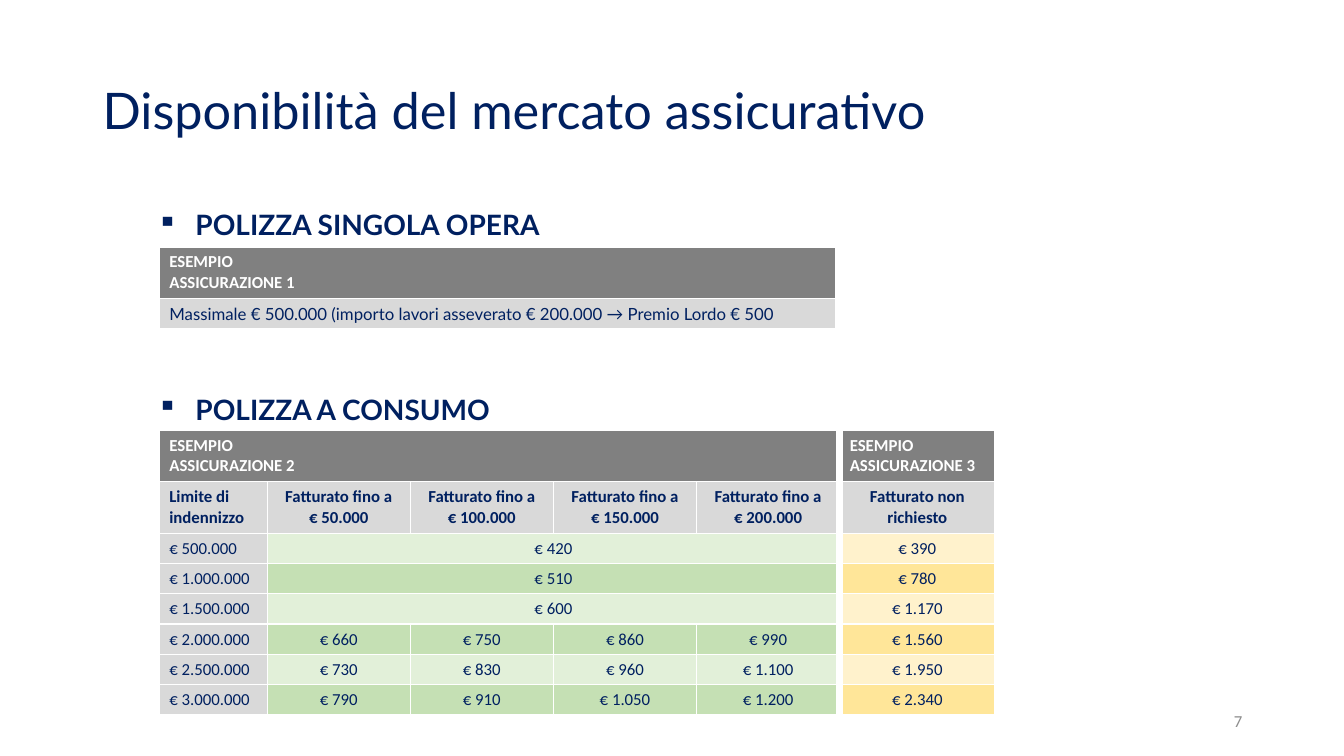
"""Build the slide on the insurance market's single-work and pay-per-use policies."""
import pptx
import pptx.dml.color
import pptx.enum.text
import pptx.oxml
import pptx.oxml.ns
import pptx.util
from pptx.util import Inches, Pt

NAVY, WHITE, DARK_GREY, LIGHT_GREY = "002060", "FFFFFF", "808080", "D9D9D9"
GREENS = ["E2F0D9", "C5E0B4"]
YELLOWS = ["FFF2CC", "FFE699"]
ALIGN = pptx.enum.text.PP_ALIGN
ANCHOR = pptx.enum.text.MSO_ANCHOR


def style_text(paragraph, font_name, size, color, bold=False, align=ALIGN.LEFT):
    paragraph.alignment = align
    font = paragraph.font
    font.name, font.size, font.bold = font_name, Pt(size), bold
    font.color.rgb = pptx.dml.color.RGBColor.from_string(color)


def style_cell(cell, text, fill, color, bold, align, left=1, right=1, font_name="Calibri"):
    cell.text = text
    for para in cell.text_frame.paragraphs:
        style_text(para, font_name, 12, color, bold, align)
    properties = cell._tc.get_or_add_tcPr()
    for side, width in (("L", left), ("R", right), ("T", 1), ("B", 1)):
        properties.append(pptx.oxml.parse_xml(
            f'<a:ln{side} {pptx.oxml.ns.nsdecls("a")} w="{Pt(width)}">'
            f'<a:solidFill><a:srgbClr val="{WHITE}"/></a:solidFill></a:ln{side}>'))
    cell.fill.solid()
    cell.fill.fore_color.rgb = pptx.dml.color.RGBColor.from_string(fill)


deck = pptx.Presentation()
deck.slide_width, deck.slide_height = Inches(13.33), Inches(7.5)
page = deck.slides.add_slide(deck.slide_layouts[6])

headings = page.shapes.add_textbox(Inches(0.87), Inches(2.01), Inches(11.5), Inches(3.06))
headings.text_frame.word_wrap = True
headings.text_frame.text = "POLIZZA SINGOLA OPERA\nPOLIZZA A CONSUMO"
for para in headings.text_frame.paragraphs:
    style_text(para, "Lato", 20, NAVY, True)
    properties = para._p.get_or_add_pPr()
    properties.set("marL", str(Inches(0.97)))
    properties.set("indent", str(Inches(-0.38)))
    bullet = pptx.oxml.parse_xml(f'<a:buChar {pptx.oxml.ns.nsdecls("a")} char="▪"/>')
    properties.insert_element_before(bullet, "a:tabLst", "a:defRPr", "a:extLst")
headings.text_frame.paragraphs[1].space_before = Pt(108)

labels = [
    ("Disponibilità del mercato assicurativo", (0.92, 0.4, 11.5, 1.45), "Lato", 36, NAVY, ALIGN.LEFT),
    ("7", (9.42, 6.95, 3, 0.4), "Calibri", 12, "8C8C8C", ALIGN.RIGHT),
]
for text, place, font_name, size, color, align in labels:
    box = page.shapes.add_textbox(*map(Inches, place))
    box.text_frame.word_wrap = True
    box.text_frame.vertical_anchor = ANCHOR.MIDDLE
    para = box.text_frame.paragraphs[0]
    para.text = text
    style_text(para, font_name, size, color, align=align)
    if size == 36:
        para.line_spacing = 0.9

turnovers = ["50.000", "100.000", "150.000", "200.000"]
premiums = [
    ["500.000", "420", None, None, None, "390"],
    ["1.000.000", "510", None, None, None, "780"],
    ["1.500.000", "600", None, None, None, "1.170"],
    ["2.000.000", "660", "750", "860", "990", "1.560"],
    ["2.500.000", "730", "830", "960", "1.100", "1.950"],
    ["3.000.000", "790", "910", "1.050", "1.200", "2.340"],
]
grid = [
    ["ESEMPIO\nASSICURAZIONE 2", None, None, None, None, "ESEMPIO ASSICURAZIONE 3"],
    ["Limite di\nindennizzo"] + [f"Fatturato fino a\n€ {amount}" for amount in turnovers]
    + ["Fatturato non richiesto"],
]
grid += [[amount and f"€ {amount}" for amount in row] for row in premiums]

usage = page.shapes.add_table(
    len(grid), 6, Inches(1.58), Inches(4.27), Inches(8.29), Inches(2.82)).table
usage.first_row = usage.horz_banding = False
for column, width in zip(usage.columns, [1.07, 1.42, 1.42, 1.42, 1.42, 1.54]):
    column.width = Inches(width)
for r, texts in enumerate(grid):
    usage.rows[r].height = Inches(0.51 if r < 2 else 0.3)
    for c, text in enumerate(texts):
        if r == 0:
            fill = DARK_GREY
        elif r == 1 or c == 0:
            fill = LIGHT_GREY
        else:
            fill = (YELLOWS if c == 5 else GREENS)[r % 2]
        style_cell(usage.cell(r, c), text or "", fill, WHITE if r == 0 else NAVY, r < 2,
                   ALIGN.LEFT if r == 0 or c == 0 else ALIGN.CENTER,
                   left=6 if c == 5 else 1, right=6 if c == 4 else 1)
    if None in texts:
        usage.cell(r, texts.index(None) - 1).merge(usage.cell(r, 4))

single = page.shapes.add_table(
    2, 1, Inches(1.58), Inches(2.45), Inches(6.74), Inches(0.81)).table
single.first_row = single.horz_banding = False
single.rows[0].height, single.rows[1].height = Inches(0.51), Inches(0.3)
style_cell(single.cell(0, 0), "ESEMPIO\nASSICURAZIONE 1", DARK_GREY, WHITE, True,
           ALIGN.LEFT, right=6)
style_cell(single.cell(1, 0),
           "Massimale € 500.000 (importo lavori asseverato € 200.000 → Premio Lordo € 500",
           LIGHT_GREY, NAVY, False, ALIGN.LEFT, right=6, font_name="Lato")

deck.save("out.pptx")
